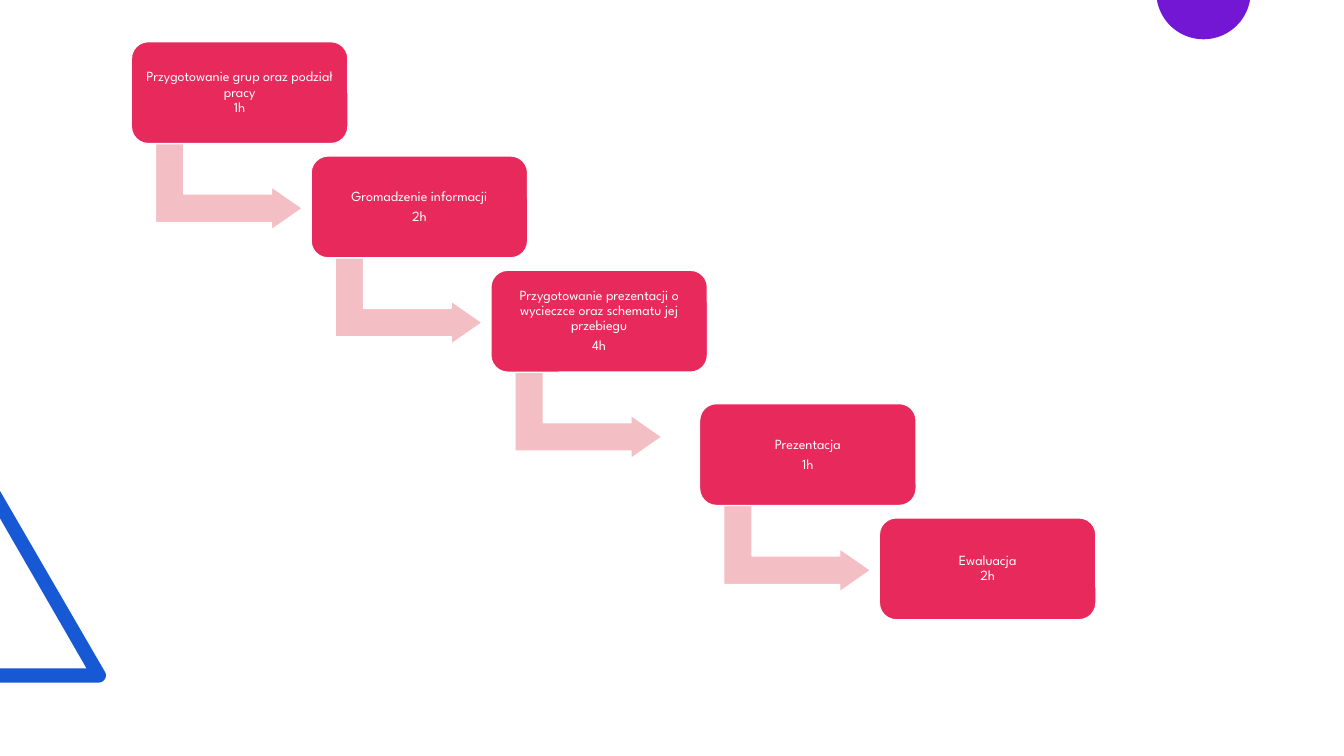
from math import cos, radians, sin

from pptx import Presentation
from pptx.dml.color import RGBColor
from pptx.enum.shapes import MSO_SHAPE
from pptx.enum.text import MSO_ANCHOR, PP_ALIGN
from pptx.util import Cm, Pt

BENT_ARROW = MSO_SHAPE.BENT_UP_ARROW
ROUNDED_RECTANGLE = MSO_SHAPE.ROUNDED_RECTANGLE
MIDDLE = MSO_ANCHOR.MIDDLE
CENTER = PP_ALIGN.CENTER

WHITE = RGBColor(0xFF, 0xFF, 0xFF)
RED = RGBColor(0xE7, 0x29, 0x5B)
PINK = RGBColor(0xF3, 0xBE, 0xC4)
BLUE = RGBColor(0x17, 0x59, 0xD5)
PURPLE = RGBColor(0x74, 0x17, 0xD5)
FONT = "League Spartan"

STEPS = [
    ["Przygotowanie grup oraz podział pracy\n1h"],
    ["Gromadzenie informacji", "2h"],
    ["Przygotowanie prezentacji o wycieczce oraz schematu jej przebiegu", "4h"],
    ["Prezentacja", "1h"],
    ["Ewaluacja\n2h"],
]
BOX_WIDTH, BOX_HEIGHT = 5.46, 2.57
ARROW_WIDTH, ARROW_HEIGHT = 2.18, 3.71


def arc(center_x, center_y, radius, start, end):
    angles = [radians(start + (end - start) * i / 40) for i in range(41)]
    return [(center_x + radius * cos(a), center_y + radius * sin(a)) for a in angles]


def paint(shape, fill, line=None):
    shape.shadow.inherit = False
    shape.fill.solid()
    shape.fill.fore_color.rgb = fill
    if line is None:
        shape.line.fill.background()
    else:
        shape.line.color.rgb = line
        shape.line.width = Pt(1)


presentation = Presentation()
presentation.slide_width = Cm(33.87)
presentation.slide_height = Cm(19.05)
slide = presentation.slides.add_slide(presentation.slide_layouts[6])

triangle_corner = [(0, 17.2), (0, 16.84), (2.18, 16.84), (0, 13.06), (0, 12.37)]
triangle_corner += arc(2.49, 17.02, 0.18, -30, 90)
circle_segment = arc(30.33, -0.2, 1.19, 9.7, 170.3)

for points, color in [(triangle_corner, BLUE), (circle_segment, PURPLE)]:
    outline = [(Cm(x), Cm(y)) for x, y in points]
    builder = slide.shapes.build_freeform(*outline[0])
    builder.add_line_segments(outline[1:])
    paint(builder.convert_to_shape(), color)

for index, texts in enumerate(STEPS):
    left = 3.31 + 4.53 * index
    top = 1.05 + 2.88 * index
    if index >= 3:
        left += 0.73
        top += 0.48

    if index < len(STEPS) - 1:
        arrow = slide.shapes.add_shape(
            BENT_ARROW, Cm(left + 1.37), Cm(top + 1.8), Cm(ARROW_WIDTH), Cm(ARROW_HEIGHT)
        )
        arrow.rotation = 90
        for position, value in enumerate([0.33, 0.25, 0.36]):
            arrow.adjustments[position] = value
        paint(arrow, PINK, WHITE)

    box = slide.shapes.add_shape(
        ROUNDED_RECTANGLE, Cm(left), Cm(top), Cm(BOX_WIDTH), Cm(BOX_HEIGHT)
    )
    paint(box, RED, WHITE)
    text_frame = box.text_frame
    text_frame.word_wrap = True
    text_frame.vertical_anchor = MIDDLE
    text_frame.margin_left = text_frame.margin_right = Cm(0.17)
    text_frame.margin_top = text_frame.margin_bottom = Cm(0.1)
    for number, text in enumerate(texts):
        paragraph = text_frame.add_paragraph() if number else text_frame.paragraphs[0]
        paragraph.text = text
        paragraph.alignment = CENTER
        paragraph.line_spacing = 0.9
        paragraph.space_after = Pt(3.5)
        for run in paragraph.runs:
            run.font.name = FONT
            run.font.size = Pt(10)
            run.font.color.rgb = WHITE

presentation.save("out.pptx")
